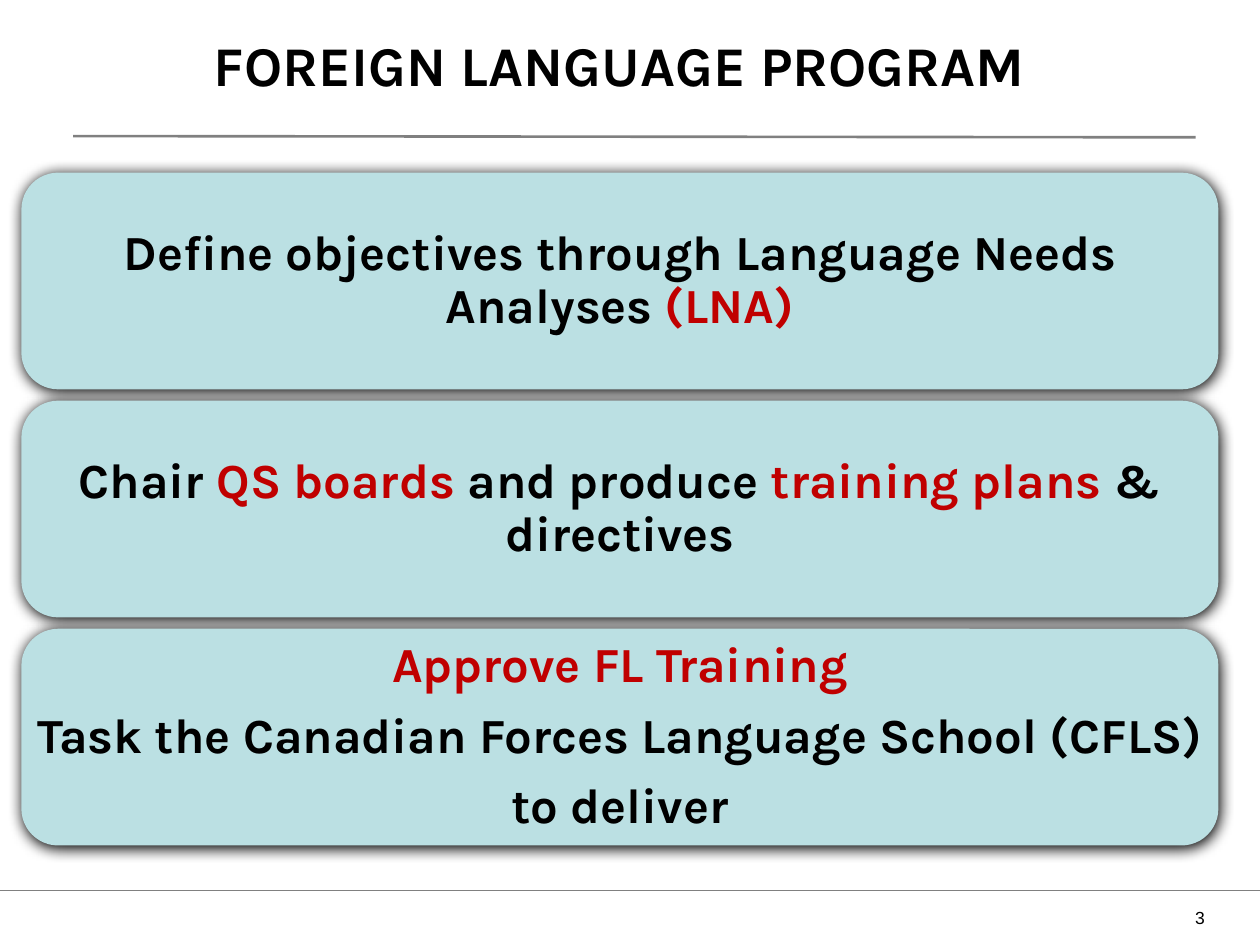
from lxml.etree import SubElement as Sub
from pptx import Presentation
from pptx.dml.color import RGBColor
from pptx.enum.shapes import MSO_CONNECTOR as Conn, MSO_SHAPE as Shape
from pptx.enum.text import MSO_ANCHOR as Anchor, PP_ALIGN as Align
from pptx.oxml.ns import qn
from pptx.util import Inches, Pt

BLACK, RED, GREY, TEAL = "000000", "C00000", "808080", "BBE0E3"
TITLE = "FOREIGN LANGUAGE PROGRAM"
PAGE = "3"
CARDS = [
    [[("Define objectives through Language Needs Analyses ", BLACK), ("(LNA)", RED)]],
    [[("Chair ", BLACK), ("QS boards ", RED), ("and produce ", BLACK),
      ("training plans ", RED), ("& directives", BLACK)]],
    [[("Approve FL Training", RED)],
     [("Task the Canadian Forces Language School (CFLS) ", BLACK)],
     [("to deliver", BLACK)]],
]
RULES = [((0.58, 1.08), (9.49, 1.09), 1.5), ((0, 7.07), (10, 7.07), 0.75)]
LEFT, TOP, WIDE, HIGH, GAP = 0.17, 1.37, 9.5, 1.72, 0.09


def color(code):
    return RGBColor.from_string(code)


def box(at):
    return [Inches(n) for n in at]


def style(run, size, code, face="Karla", bold=True):
    font = run.font
    font.name, font.size, font.bold = face, Pt(size), bold
    font.color.rgb = color(code)


def label(at, text, align, size, face, bold):
    frame = slide.shapes.add_textbox(*box(at)).text_frame
    frame.word_wrap = True
    para = frame.paragraphs[0]
    para.text, para.alignment = text, align
    style(para.runs[0], size, BLACK, face, bold)
    return frame


def rule(start, end, width):
    line = slide.shapes.add_connector(Conn.STRAIGHT, *box(start + end))
    line.line.color.rgb, line.line.width = color(GREY), Pt(width)
    Sub(line._element.spPr, qn("a:effectLst"))


def shade(shape):
    shape.shadow.inherit = False
    effects = shape._element.spPr.find(qn("a:effectLst"))
    outer = Sub(effects, qn("a:outerShdw"), blurRad=str(Pt(8.5)),
                dist=str(Pt(1)), dir="5400000", rotWithShape="0")
    Sub(outer, qn("a:srgbClr"), val=BLACK)


def card(row, paras):
    top = TOP + row * (HIGH + GAP)
    shape = slide.shapes.add_shape(Shape.ROUNDED_RECTANGLE, *box((LEFT, top, WIDE, HIGH)))
    shape.adjustments[0] = 0.17
    shape.fill.solid()
    shape.fill.fore_color.rgb = color(TEAL)
    shape.line.fill.background()
    shade(shape)
    frame = shape.text_frame
    frame.word_wrap, frame.vertical_anchor = True, Anchor.MIDDLE
    frame.margin_left = frame.margin_right = Inches(0.02)
    frame.margin_top = frame.margin_bottom = Inches(0.02)
    for i, parts in enumerate(paras):
        para = frame.add_paragraph() if i else frame.paragraphs[0]
        para.alignment, para.line_spacing = Align.CENTER, 0.9
        para.space_before = Pt(10 if i else 0)
        for text, code in parts:
            run = para.add_run()
            run.text = text
            style(run, 28, code)


deck = Presentation()
deck.slide_width, deck.slide_height = Inches(10), Inches(7.5)
slide = deck.slides.add_slide(deck.slide_layouts[6])

for item in RULES:
    rule(*item)
head = label((0.42, 0.12, 9, 1.25), TITLE, Align.CENTER, 32, "Karla", True)
head.margin_top = Inches(0.12)
label((7.58, 7.15, 2.08, 0.42), PAGE, Align.RIGHT, 10, "Arial", False)
for row, paras in enumerate(CARDS):
    card(row, paras)

deck.save("out.pptx")
